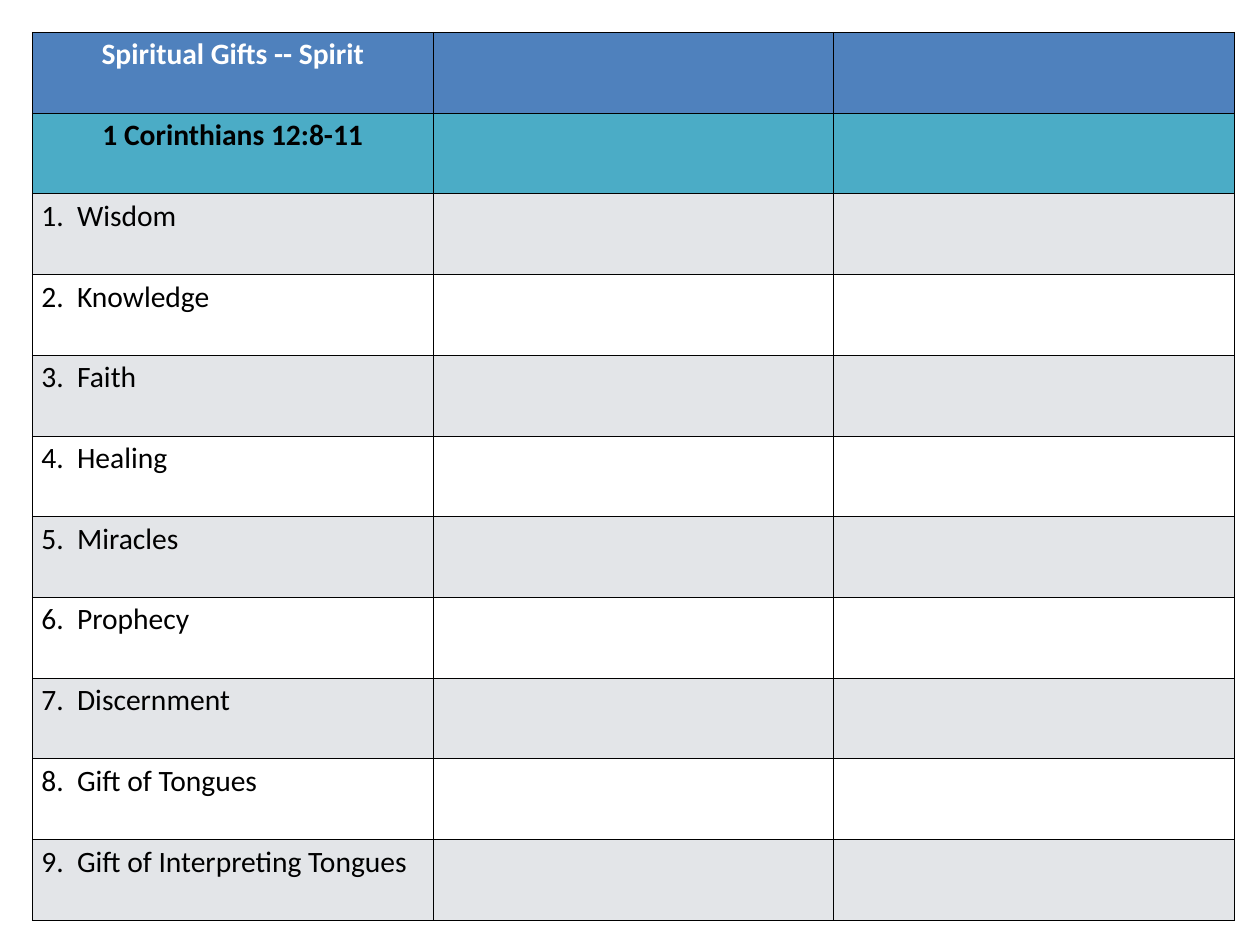
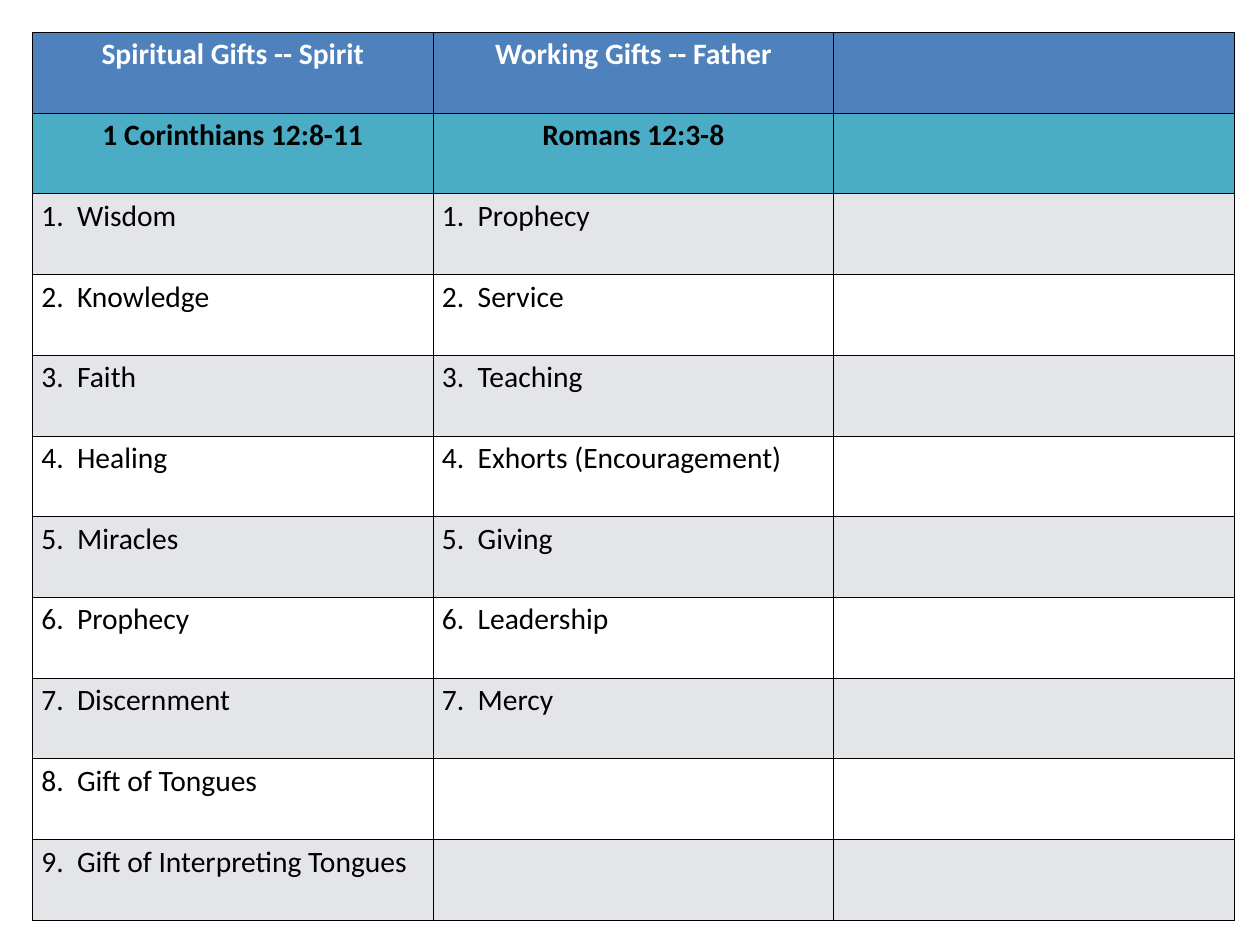
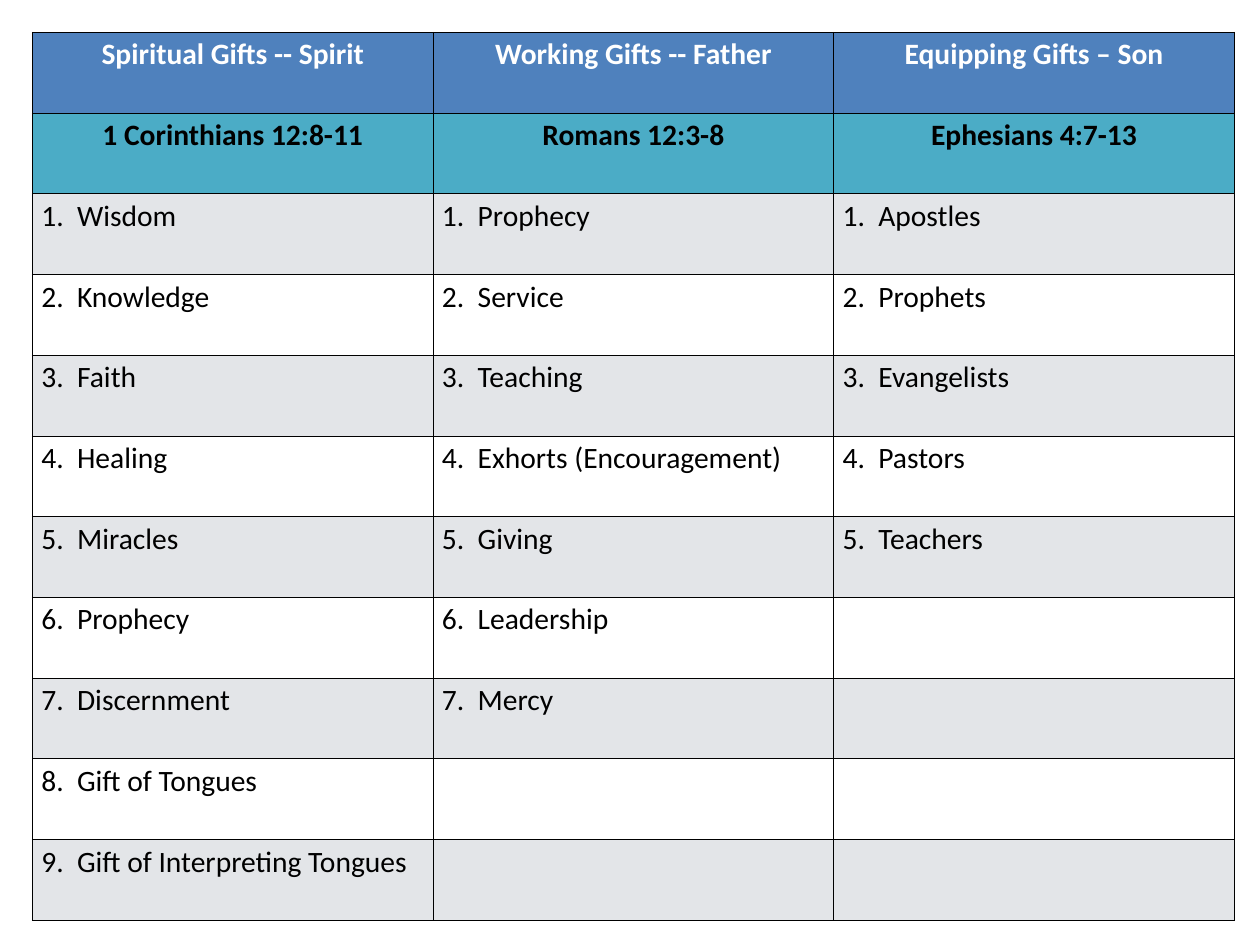
from lxml.etree import SubElement
from pptx import Presentation
from pptx.dml.color import RGBColor
from pptx.enum.text import PP_ALIGN
from pptx.oxml.ns import qn
from pptx.util import Emu, Pt

# Shared look, lengths in px (90 to the inch)
SCALE = 10160
WIDTH, HEIGHT = 1280, 960
MARGIN = 33
COL, ROW = 407, 82
FONT, SIZE = "Calibri", 24
BLACK, WHITE = "000000", "FFFFFF"
BLUE, TEAL, GRAY = "4F81BD", "4BACC6", "E3E5E8"

# One entry per column: heading, passage, gifts
GIFTS = [
    ("Spiritual Gifts -- Spirit", "1 Corinthians 12:8-11",
     ["Wisdom", "Knowledge", "Faith", "Healing", "Miracles", "Prophecy",
      "Discernment", "Gift of Tongues", "Gift of Interpreting Tongues"]),
    ("Working Gifts -- Father", "Romans 12:3-8",
     ["Prophecy", "Service", "Teaching", "Exhorts (Encouragement)",
      "Giving", "Leadership", "Mercy"]),
    ("Equipping Gifts – Son", "Ephesians 4:7-13",
     ["Apostles", "Prophets", "Evangelists", "Pastors", "Teachers"]),
]
ROWS = 2 + max(len(names) for _, _, names in GIFTS)


def px(count):
    return Emu(count * SCALE)


def color(code):
    return RGBColor.from_string(code)


def style(row):
    """Fill, text colour, bold and alignment of a row."""
    if row == 0:
        return BLUE, WHITE, True, PP_ALIGN.CENTER
    if row == 1:
        return TEAL, BLACK, True, PP_ALIGN.CENTER
    return (WHITE if row % 2 else GRAY), BLACK, False, PP_ALIGN.LEFT


def border(cell):
    props = cell._tc.get_or_add_tcPr()
    for side in ("lnL", "lnR", "lnT", "lnB"):
        line = SubElement(props, qn(f"a:{side}"), w=str(Pt(1)))
        fill = SubElement(line, qn("a:solidFill"))
        SubElement(fill, qn("a:srgbClr"), val=BLACK)


def paint(cell, row):
    border(cell)
    cell.fill.solid()
    cell.fill.fore_color.rgb = color(style(row)[0])


def write(cell, row, text):
    _, ink, bold, align = style(row)
    para = cell.text_frame.paragraphs[0]
    para.alignment = align
    run = para.add_run()
    run.text = text
    run.font.name = FONT
    run.font.size = Pt(SIZE)
    run.font.bold = bold
    run.font.color.rgb = color(ink)


def add_grid(slide, shown):
    """Draw the full grid with the first `shown` columns filled in."""
    cols = len(GIFTS)
    frame = slide.shapes.add_table(ROWS, cols, px(MARGIN), px(MARGIN),
                                   px(COL * cols), px(ROW * ROWS))
    table = frame.table
    table.first_row = table.horz_banding = False
    for column in table.columns:
        column.width = px(COL)
    for row, line in enumerate(table.rows):
        line.height = px(ROW)
        for cell in line.cells:
            paint(cell, row)
    for col, (head, verse, names) in enumerate(GIFTS[:shown]):
        items = [f"{num}.  {name}" for num, name in enumerate(names, 1)]
        for row, text in enumerate([head, verse, *items]):
            write(table.cell(row, col), row, text)


def main():
    deck = Presentation()
    deck.slide_width, deck.slide_height = px(WIDTH), px(HEIGHT)
    # Each slide reveals one more column
    for shown in range(1, len(GIFTS) + 1):
        add_grid(deck.slides.add_slide(deck.slide_layouts[6]), shown)
    deck.save("out.pptx")


if __name__ == "__main__":
    main()
